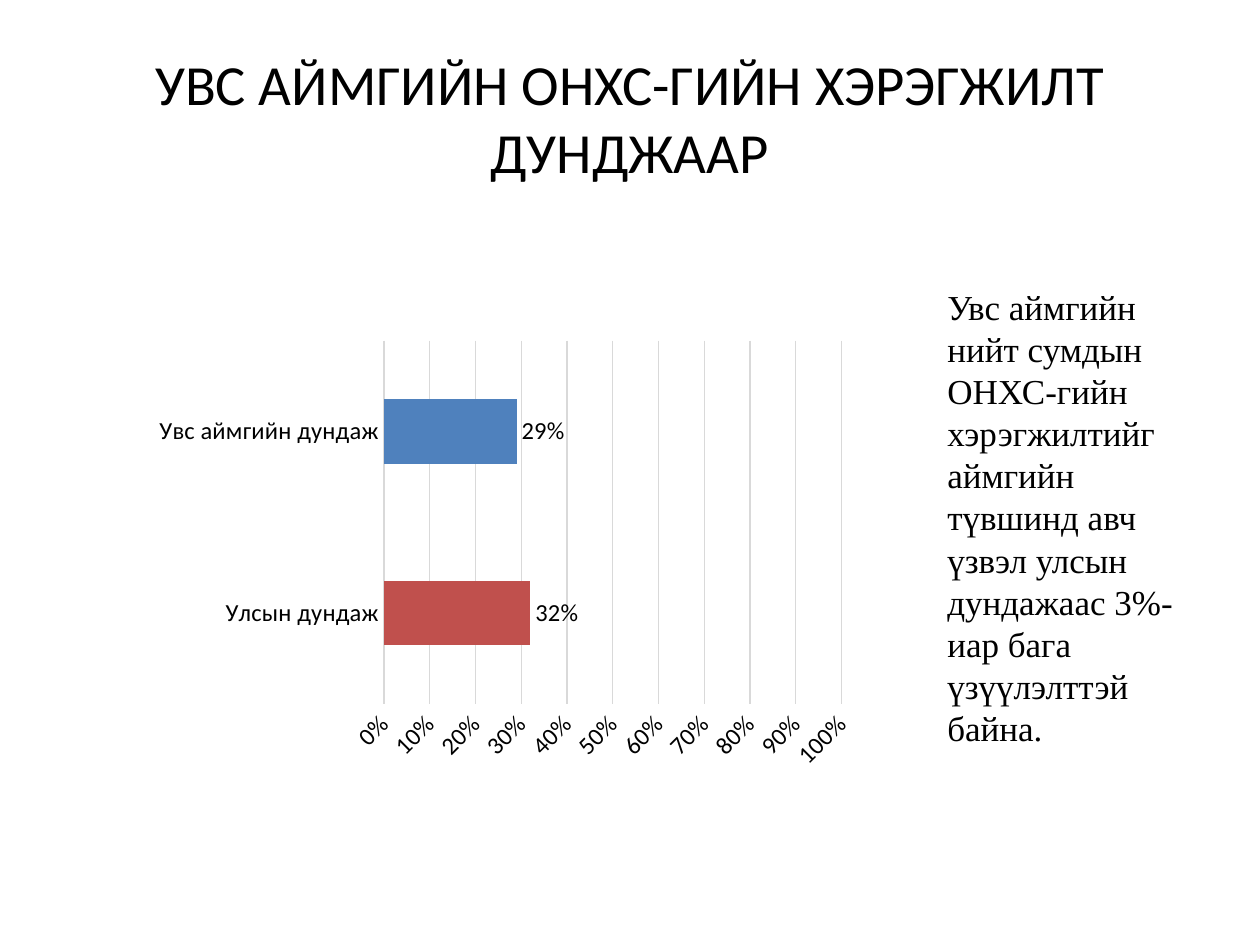
from pptx import Presentation
from pptx.chart.data import CategoryChartData
from pptx.dml.color import RGBColor
from pptx.enum.chart import XL_CHART_TYPE as ChartType, XL_LABEL_POSITION as LabelPos, XL_TICK_MARK as TickMark
from pptx.enum.text import MSO_ANCHOR as Anchor, MSO_AUTO_SIZE as AutoSize, PP_ALIGN as Align
from pptx.util import Inches, Pt

BLACK = RGBColor(0x00, 0x00, 0x00)
GRID_GREY = RGBColor(0xD9, 0xD9, 0xD9)
PROVINCE_BLUE = RGBColor(0x4F, 0x81, 0xBD)
NATION_RED = RGBColor(0xC0, 0x50, 0x4D)

WIDTH, HEIGHT = Inches(10), Inches(7.5)
HEADING = "УВС АЙМГИЙН ОНХС-ГИЙН ХЭРЭГЖИЛТ ДУНДЖААР"
FINDING = ("Увс аймгийн нийт сумдын ОНХС-гийн хэрэгжилтийг аймгийн түвшинд "
           "авч үзвэл улсын дундажаас 3%-иар бага үзүүлэлттэй байна.")
AVERAGES = {"Улсын дундаж": 0.32, "Увс аймгийн дундаж": 0.29}


def share(left, top, width, height):
    return (round(WIDTH * left), round(HEIGHT * top),
            round(WIDTH * width), round(HEIGHT * height))


def style(font, size, name="Calibri"):
    font.size, font.name = Pt(size), name
    font.color.rgb = BLACK


def place_heading(slide, box):
    heading = slide.shapes.title
    heading.left, heading.top, heading.width, heading.height = box
    frame = heading.text_frame
    frame.text = HEADING
    frame.word_wrap = True
    frame.auto_size = AutoSize.NONE
    frame.vertical_anchor = Anchor.MIDDLE
    frame.paragraphs[0].alignment = Align.CENTER
    style(frame.paragraphs[0].font, 32.4)


def place_finding(slide, box):
    frame = slide.shapes.add_textbox(*box).text_frame
    frame.word_wrap = True
    frame.auto_size = AutoSize.SHAPE_TO_FIT_TEXT
    frame.text = FINDING
    style(frame.paragraphs[0].font, 20, "Times New Roman")


def grey_line(line):
    line.color.rgb = GRID_GREY
    line.width = Pt(0.75)


def style_axes(chart):
    names, scale = chart.category_axis, chart.value_axis
    for axis in (names, scale):
        axis.major_tick_mark = axis.minor_tick_mark = TickMark.NONE
        style(axis.tick_labels.font, 14)
    names.has_major_gridlines = False
    grey_line(names.format.line)
    scale.minimum_scale, scale.maximum_scale, scale.major_unit = 0, 1, 0.1
    scale.has_major_gridlines = True
    grey_line(scale.major_gridlines.format.line)
    scale.format.line.fill.background()
    scale.tick_labels.number_format = "0%"
    scale.tick_labels.number_format_is_linked = False
    scale._element.txPr.bodyPr.set("rot", str(-45 * 60000))


def place_averages(slide, box):
    averages = CategoryChartData(number_format="0%")
    averages.categories = list(AVERAGES)
    averages.add_series("Series 1", list(AVERAGES.values()))
    chart = slide.shapes.add_chart(ChartType.BAR_CLUSTERED, *box, averages).chart
    chart.has_legend = chart.has_title = False
    style(chart.font, 14)
    style_axes(chart)

    plot = chart.plots[0]
    plot.gap_width = 182
    plot.vary_by_categories = False
    bars = plot.series[0]
    bars.invert_if_negative = False
    for fill, color in ((bars.format.fill, PROVINCE_BLUE),
                        (bars.points[0].format.fill, NATION_RED)):
        fill.solid()
        fill.fore_color.rgb = color
    labels = bars.data_labels
    labels.show_value = True
    labels.position = LabelPos.OUTSIDE_END
    labels.number_format = "0%"
    labels.number_format_is_linked = False
    style(labels.font, 14)


def main():
    deck = Presentation()
    deck.slide_width, deck.slide_height = WIDTH, HEIGHT
    slide = deck.slides.add_slide(deck.slide_layouts[5])
    place_heading(slide, share(0.05, 0.04, 0.9, 1 / 6))
    place_finding(slide, share(0.742, 0.296, 0.221, 0.507))
    place_averages(slide, share(0.115, 0.351, 0.573, 0.473))
    deck.save("out.pptx")


if __name__ == "__main__":
    main()
